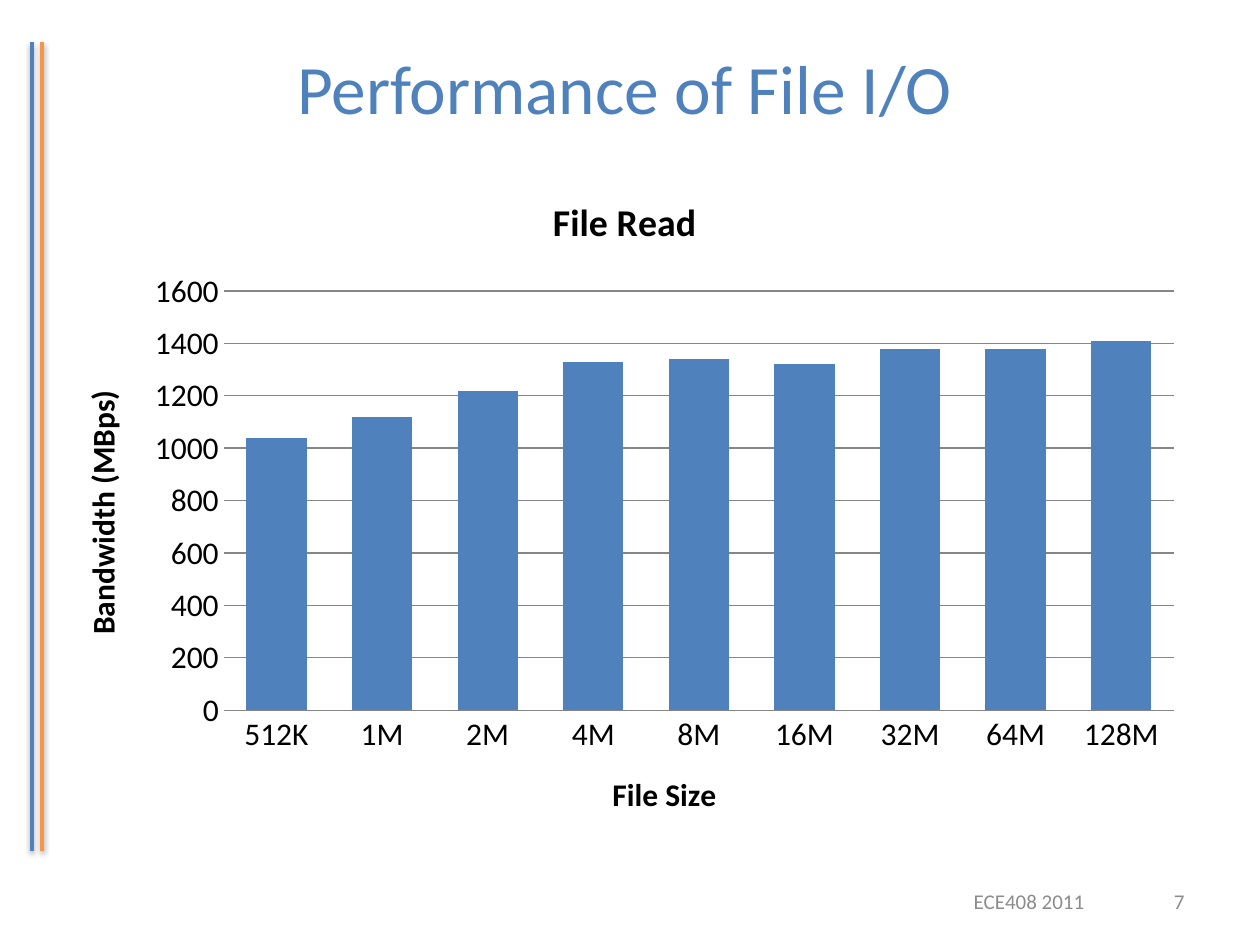
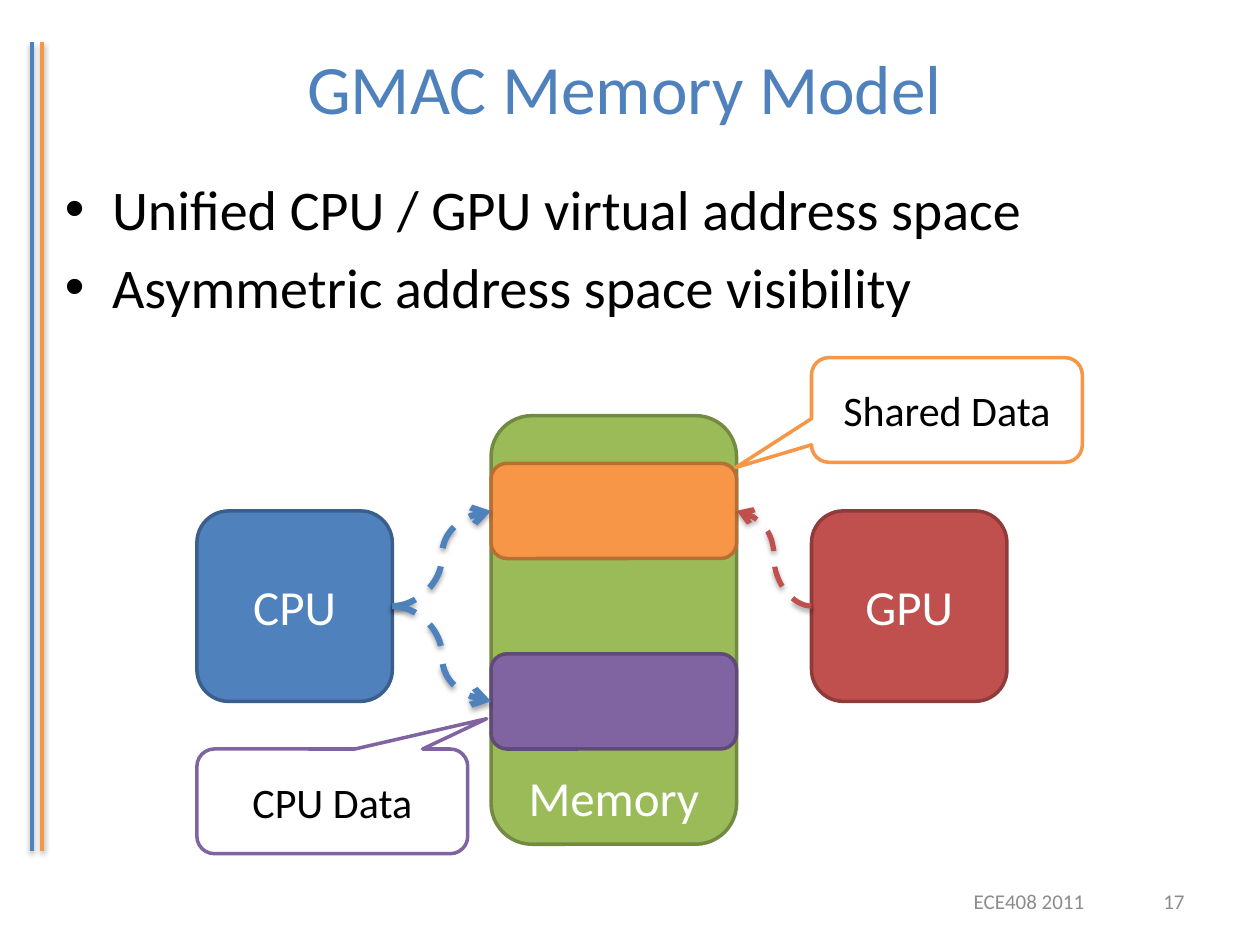
from lxml.etree import SubElement
from pptx import Presentation
from pptx.chart.data import CategoryChartData
from pptx.dml.color import RGBColor
from pptx.enum.chart import XL_CHART_TYPE, XL_TICK_MARK
from pptx.enum.dml import MSO_LINE
from pptx.enum.shapes import MSO_CONNECTOR, MSO_SHAPE
from pptx.enum.text import MSO_ANCHOR, PP_ALIGN
from pptx.oxml.ns import qn
from pptx.util import Cm, Pt

BLUE = RGBColor(0x4F, 0x81, 0xBD)
NAVY = RGBColor(0x3A, 0x5F, 0x8C)
ORANGE = RGBColor(0xF7, 0x96, 0x46)
RUST = RGBColor(0xB7, 0x6F, 0x34)
GREEN = RGBColor(0x9B, 0xBB, 0x59)
OLIVE = RGBColor(0x73, 0x8A, 0x42)
RED = RGBColor(0xC0, 0x50, 0x4D)
MAROON = RGBColor(0x8E, 0x3B, 0x39)
PURPLE = RGBColor(0x80, 0x64, 0xA2)
PLUM = RGBColor(0x5F, 0x4A, 0x78)
GRAY = RGBColor(0x8C, 0x8C, 0x8C)
GRID = RGBColor(0x86, 0x86, 0x86)
BLACK = RGBColor(0, 0, 0)
WHITE = RGBColor(255, 255, 255)
FONT = "Calibri"

TITLE = (1.06, 0.76, 23.07, 1.98)
BODY = (1.06, 3.39, 23.07, 13.64)
FOOT = (19.05, 17.65, 5.08, 1.02)
MODEL = (3.97, 7.21, 17.86, 10.02)


def style(font, size, color, bold=False):
    """Set the face, size, colour and weight of a font."""
    font.name, font.size, font.bold = FONT, Pt(size), bold
    font.color.rgb = color


def write(frame, text, size=28, color=BLACK, align=PP_ALIGN.CENTER,
          anchor=MSO_ANCHOR.MIDDLE, bullet=False, gap=0):
    """Fill a text frame, one paragraph for each line."""
    frame.word_wrap = True
    frame.vertical_anchor = anchor
    for index, line in enumerate(text.split("\n")):
        para = frame.add_paragraph() if index else frame.paragraphs[0]
        para.text = line
        para.alignment = align
        if bullet:
            props = para._p.get_or_add_pPr()
            props.set("marL", str(Cm(0.95)))
            props.set("indent", str(-Cm(0.95)))
            SubElement(props, qn("a:buFont"), typeface="Arial")
            SubElement(props, qn("a:buChar"), char="•")
        if index:
            para.space_before = Pt(gap)
        style(para.font, size, color)


def label(slide, box, text, **form):
    """Place a text box."""
    area = slide.shapes.add_textbox(*map(Cm, box))
    write(area.text_frame, text, **form)


def block(slide, kind, box, fill, edge, text="", **form):
    """Place a filled and outlined shape with its text."""
    shape = slide.shapes.add_shape(kind, *map(Cm, box))
    shape.shadow.inherit = False
    shape.fill.solid()
    shape.fill.fore_color.rgb = fill
    shape.line.color.rgb = edge
    shape.line.width = Pt(2)
    if text:
        write(shape.text_frame, text, **form)
    return shape


def shade(line, depth, drop):
    """Give a connector a soft shadow below it."""
    effect = SubElement(line._element.spPr, qn("a:effectLst"))
    cast = SubElement(effect, qn("a:outerShdw"), blurRad=str(Pt(3.1)),
                      dist=str(Pt(drop)), dir="5400000", rotWithShape="0")
    tint = SubElement(cast, qn("a:srgbClr"), val="000000")
    SubElement(tint, qn("a:alpha"), val=str(depth * 1000))


def rails(slide):
    """Draw the two upright lines at the left edge."""
    for left, color in ((0.64, BLUE), (0.85, ORANGE)):
        rail = slide.shapes.add_connector(
            MSO_CONNECTOR.STRAIGHT, Cm(left), Cm(0.85), Cm(left), Cm(17.15))
        rail.line.color.rgb = color
        rail.line.width = Pt(2)
        shade(rail, 38, 1.6)


def footer(slide, box, number):
    """Place the course name and the slide number."""
    left, top, width, height = box
    label(slide, (left, top, 3.39, height), "ECE408 2011", size=12, color=GRAY)
    label(slide, (left + width - 1.48, top, 1.48, height), str(number),
          size=12, color=GRAY, align=PP_ALIGN.RIGHT)


def page(deck, title, number):
    """Start a slide with the parts that all slides share."""
    slide = deck.slides.add_slide(deck.slide_layouts[6])
    rails(slide)
    label(slide, TITLE, title, size=39.6, color=BLUE)
    footer(slide, FOOT, number)
    return slide


def head(owner, text, size):
    """Title a chart or an axis."""
    owner.has_title = True
    frame = (owner.chart_title if hasattr(owner, "chart_title")
             else owner.axis_title).text_frame
    frame.text = text
    style(frame.paragraphs[0].runs[0].font, size, BLACK, bold=True)


def graph(slide, box):
    """Chart read bandwidth by file size."""
    data = CategoryChartData()
    data.categories = ["512K", "1M", "2M", "4M", "8M", "16M", "32M", "64M", "128M"]
    data.add_series("Series 1", [1040, 1120, 1220, 1330, 1340, 1320, 1380, 1380, 1410])
    chart = slide.shapes.add_chart(
        XL_CHART_TYPE.COLUMN_CLUSTERED, *map(Cm, box), data).chart
    style(chart.font, 18, BLACK)
    chart.has_legend = False
    head(chart, "File Read", 21.6)
    chart.chart_title.include_in_layout = False
    plot = chart.plots[0]
    plot.gap_width, plot.overlap, plot.vary_by_categories = 75, -25, False
    fill = plot.series[0].format.fill
    fill.solid()
    fill.fore_color.rgb = BLUE
    base, scale = chart.category_axis, chart.value_axis
    for axis, text in ((base, "File Size"), (scale, "Bandwidth (MBps)")):
        head(axis, text, 18)
        axis.major_tick_mark = axis.minor_tick_mark = XL_TICK_MARK.NONE
    scale.minimum_scale, scale.maximum_scale, scale.major_unit = 0, 1600, 200
    scale.has_major_gridlines = True
    for line in (base.format.line, scale.major_gridlines.format.line):
        line.color.rgb = GRID
        line.width = Pt(0.75)
    scale.format.line.fill.background()


def curve(slide, start, side, end, goal, color, width):
    """Join two blocks with a dashed curved arrow."""
    link = slide.shapes.add_connector(MSO_CONNECTOR.CURVE, 0, 0, 0, 0)
    link.begin_connect(start, side)
    link.end_connect(end, goal)
    link.line.color.rgb = color
    link.line.width = Pt(width)
    link.line.dash_style = MSO_LINE.DASH
    SubElement(link.line._ln, qn("a:tailEnd"), type="arrow")
    shade(link, 35, 1.8)


def model(slide, box):
    """Draw the processors, the memory and the data they see."""
    left, top, width, height = box
    unit = 0.96
    roof = top + 1.17
    core, wide, note = 3.94, 4.95, (5.46, 2.11)
    mid, right = left + 5.93, left + 12.39
    rounded, callout = MSO_SHAPE.ROUNDED_RECTANGLE, MSO_SHAPE.ROUNDED_RECTANGULAR_CALLOUT
    deep = 4 * unit

    cpu = block(slide, rounded, (left, roof + 2 * unit, core, deep),
                BLUE, NAVY, "CPU", color=WHITE)
    block(slide, rounded, (mid, roof, wide, 9 * unit), GREEN, OLIVE,
          "Memory", color=WHITE, anchor=MSO_ANCHOR.BOTTOM)
    gpu = block(slide, rounded, (right, roof + 2 * unit, core, deep),
                RED, MAROON, "GPU", color=WHITE)
    shared, own = [
        block(slide, rounded, (mid, roof + row * unit, wide, 2 * unit), fill, edge)
        for row, fill, edge in ((1, ORANGE, RUST), (5, PURPLE, PLUM))]

    curve(slide, gpu, 1, shared, 3, RED, 3)
    for data in (shared, own):
        curve(slide, cpu, 3, data, 1, BLUE, 3.5)

    for across, down, edge, text, tip in (
            (right, top, ORANGE, "Shared Data", (-0.78, 0.55)),
            (left, roof + 7 * unit, PURPLE, "CPU Data", (0.57, -0.79))):
        bubble = block(slide, callout, (across, down, *note), WHITE, edge, text, size=24)
        bubble.adjustments[0], bubble.adjustments[1] = tip


def main():
    """Build and save both slides."""
    deck = Presentation()
    deck.slide_width, deck.slide_height = Cm(25.4), Cm(19.05)
    graph(page(deck, "Performance of File I/O", 7), BODY)
    slide = page(deck, "GMAC Memory Model", 17)
    label(slide, BODY,
          "Unified CPU / GPU virtual address space\nAsymmetric address space visibility",
          size=32, align=PP_ALIGN.LEFT, anchor=MSO_ANCHOR.TOP, bullet=True, gap=6.4)
    model(slide, MODEL)
    deck.save("out.pptx")


if __name__ == "__main__":
    main()
